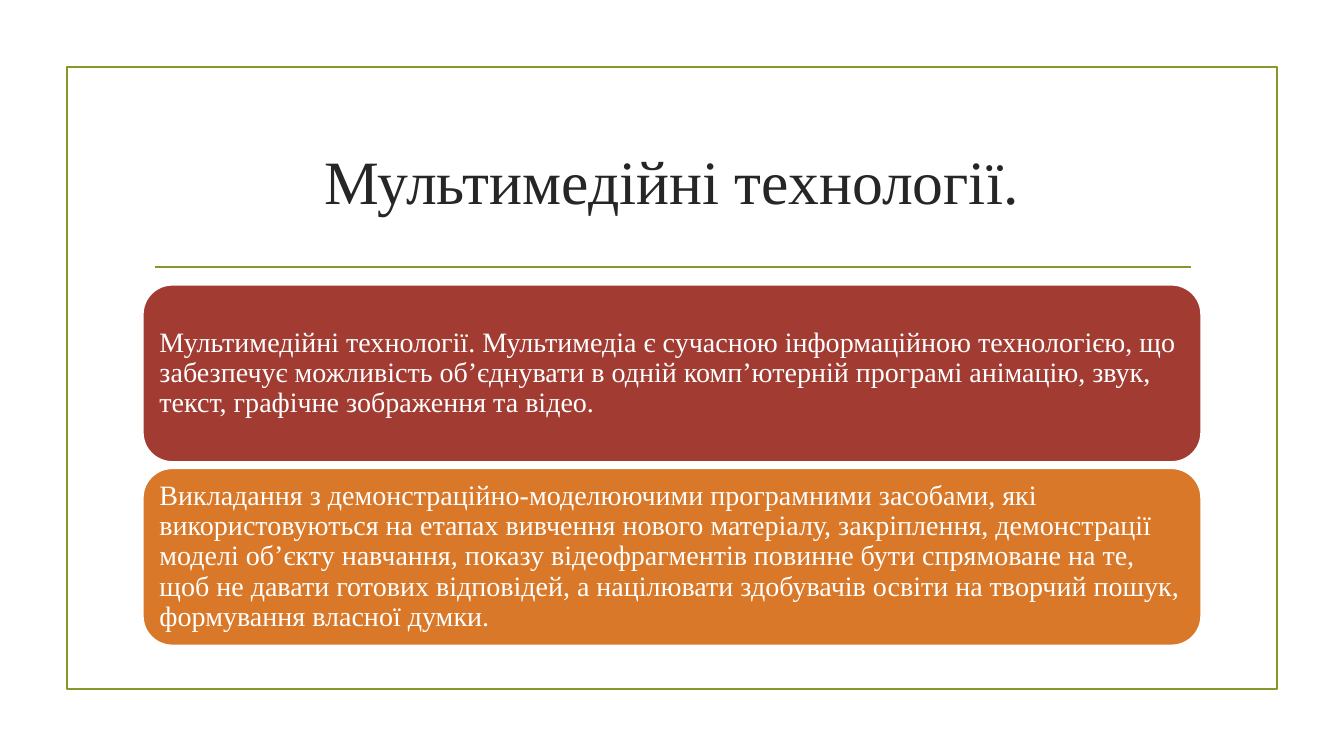
from pptx import Presentation, util as u
from pptx.dml.color import RGBColor
from pptx.enum import shapes, text
from pptx.oxml.ns import qn
from lxml import etree

OLIVE = RGBColor(0x83, 0x99, 0x2A)
RED = RGBColor(0xA2, 0x3C, 0x33)
ORANGE = RGBColor(0xD9, 0x78, 0x28)
INK = RGBColor(0x26, 0x26, 0x26)
WHITE = RGBColor(0xFF, 0xFF, 0xFF)

HEADING = "Мультимедійні технології."
STATEMENTS = [
    ("Мультимедійні технології. Мультимедіа є сучасною інформаційною технологією, "
     "що забезпечує можливість об’єднувати в одній комп’ютерній програмі анімацію, "
     "звук, текст, графічне зображення та відео.", RED),
    ("Викладання з демонстраційно-моделюючими програмними засобами, які "
     "використовуються на етапах вивчення нового матеріалу, закріплення, "
     "демонстрації моделі об’єкту навчання, показу відеофрагментів повинне бути "
     "спрямоване на те, щоб не давати готових відповідей, а націлювати здобувачів "
     "освіти на творчий пошук, формування власної думки.", ORANGE),
]


class SlideSheet:
    """Draws styled elements on one slide with a grid of 160 columns and 90 rows."""

    COLUMNS, ROWS = 160, 90
    FONT = "Times New Roman"
    RULE = u.Pt(1.25)
    INSET = u.Inches(0.08)

    def __init__(self, deck):
        self.cell_w = deck.slide_width / self.COLUMNS
        self.cell_h = deck.slide_height / self.ROWS
        self.slide = deck.slides.add_slide(deck.slide_layouts[6])

    def place(self, col, row, cols, rows):
        return [round(n) for n in (col * self.cell_w, row * self.cell_h,
                                   cols * self.cell_w, rows * self.cell_h)]

    def typeset(self, holder, wording, size, color, align, spacing):
        frame = holder.text_frame
        frame_format = {"word_wrap": True, "vertical_anchor": text.MSO_ANCHOR.MIDDLE}
        for side in ("left", "top", "right", "bottom"):
            frame_format["margin_" + side] = self.INSET
        paragraph = frame.paragraphs[0]
        run = paragraph.add_run()
        run.text = wording
        run.font.color.rgb = color
        for target, values in (
            (frame, frame_format),
            (paragraph, {"alignment": align, "line_spacing": spacing}),
            (run.font, {"name": self.FONT, "size": u.Pt(size)}),
        ):
            for key, value in values.items():
                setattr(target, key, value)

    def panel(self, kind, area, line, fill=None):
        panel = self.slide.shapes.add_shape(kind, *self.place(*area))
        panel.shadow.inherit = False
        panel.line.color.rgb = line
        panel.line.width = self.RULE
        if fill is None:
            panel.fill.background()
        else:
            panel.fill.solid()
            panel.fill.fore_color.rgb = fill
        return panel

    def border(self, area):
        self.panel(shapes.MSO_SHAPE.RECTANGLE, area, OLIVE)

    def divider(self, col, row, cols):
        x, y, width, _ = self.place(col, row, cols, 0)
        divider = self.slide.shapes.add_connector(
            shapes.MSO_CONNECTOR.STRAIGHT, x, y, x + width, y)
        divider.line.color.rgb = OLIVE
        divider.line.width = self.RULE
        etree.SubElement(divider.element.spPr, qn("a:effectLst"))

    def heading(self, area, wording):
        heading = self.slide.shapes.add_textbox(*self.place(*area))
        self.typeset(heading, wording, 44, INK, text.PP_ALIGN.CENTER, 1.0)

    def card(self, area, wording, fill):
        card = self.panel(shapes.MSO_SHAPE.ROUNDED_RECTANGLE, area, WHITE, fill)
        self.typeset(card, wording, 20, WHITE, text.PP_ALIGN.LEFT, 0.9)


def main():
    deck = Presentation()
    deck.slide_width, deck.slide_height = u.Inches(13.33), u.Inches(7.5)
    sheet = SlideSheet(deck)
    sheet.border((8, 8, 144, 74))
    sheet.divider(18.4, 31.8, 123.4)
    sheet.heading((17, 12.8, 126, 17.2), HEADING)
    for index, (wording, fill) in enumerate(STATEMENTS):
        sheet.card((17, 33.9 + 21.85 * index, 126, 21.1), wording, fill)
    deck.save("out.pptx")


if __name__ == "__main__":
    main()
